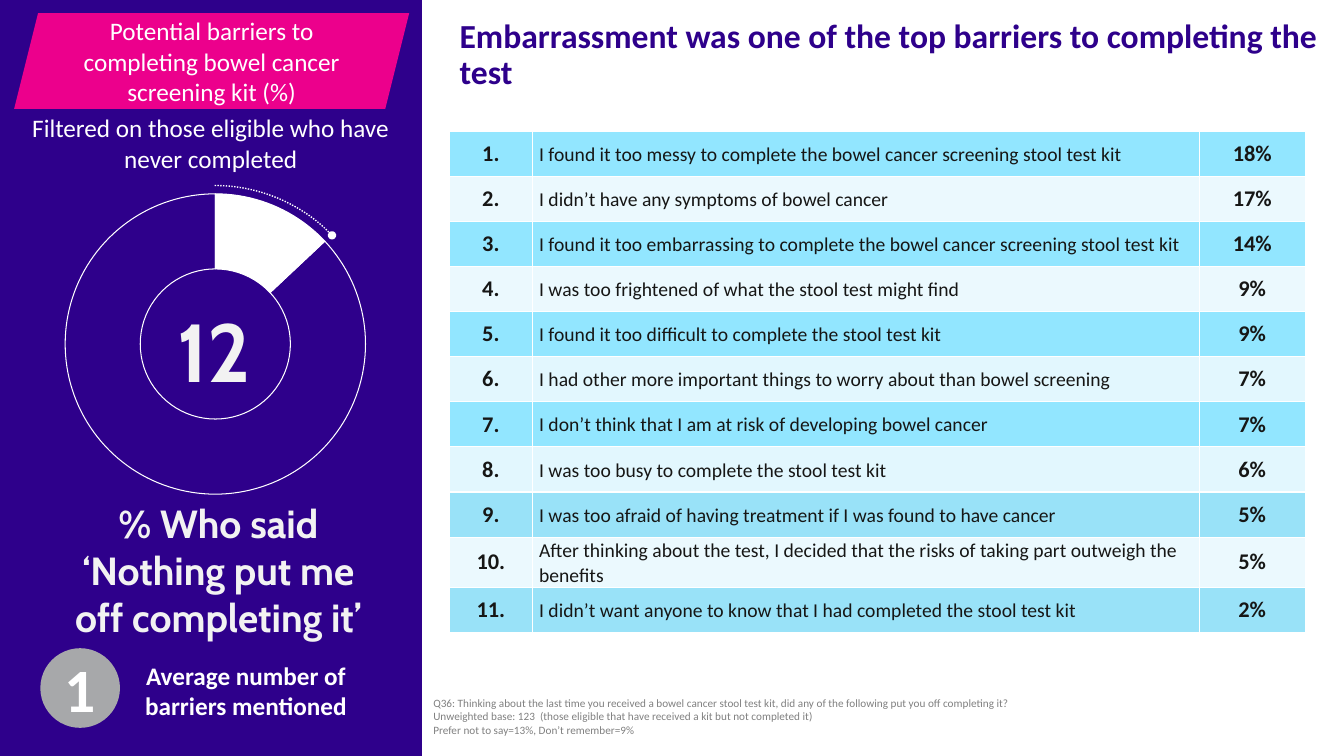
from lxml import etree
from pptx import Presentation
from pptx.chart.data import CategoryChartData
from pptx.dml.color import RGBColor
from pptx.enum.chart import XL_CHART_TYPE
from pptx.enum.dml import MSO_LINE
from pptx.enum.shapes import MSO_SHAPE
from pptx.enum.text import MSO_ANCHOR, MSO_AUTO_SIZE, PP_ALIGN
from pptx.oxml import parse_xml
from pptx.oxml.ns import qn
from pptx.util import Pt

LEFT, CENTER = PP_ALIGN.LEFT, PP_ALIGN.CENTER
TOP, MIDDLE = MSO_ANCHOR.TOP, MSO_ANCHOR.MIDDLE
FIXED, GROW = MSO_AUTO_SIZE.NONE, MSO_AUTO_SIZE.SHAPE_TO_FIT_TEXT
TITLE_ONLY = 5
PURPLE, PINK, GREY, WHITE = "2E008B", "EC008C", "A7A8AA", "FFFFFF"
PALE, INK, NOTE_GREY = "F2F2F2", "161615", "808080"
SKY, DULL_SKY, ICE, MIST = "92E6FF", "99E2F8", "EBF9FE", "E2F7FE"

BARRIERS = [
    ("I found it too messy to complete the bowel cancer screening stool test kit", 18, SKY),
    ("I didn’t have any symptoms of bowel cancer", 17, ICE),
    ("I found it too embarrassing to complete the bowel cancer screening stool test kit", 14, SKY),
    ("I was too frightened of what the stool test might find", 9, ICE),
    ("I found it too difficult to complete the stool test kit", 9, SKY),
    ("I had other more important things to worry about than bowel screening", 7, MIST),
    ("I don’t think that I am at risk of developing bowel cancer", 7, SKY),
    ("I was too busy to complete the stool test kit", 6, MIST),
    ("I was too afraid of having treatment if I was found to have cancer", 5, DULL_SKY),
    ("After thinking about the test, I decided that the risks of taking part outweigh the benefits", 5, ICE),
    ("I didn’t want anyone to know that I had completed the stool test kit", 2, DULL_SKY),
]
NOTES = [
    "Q36: Thinking about the last time you received a bowel cancer stool test kit, "
    "did any of the following put you off completing it?",
    "Unweighted base: 123  (those eligible that have received a kit but not completed it)",
    "Prefer not to say=13%, Don’t remember=9%",
]


def color(value):
    return RGBColor.from_string(value)


def set_all(target, values):
    for name, value in values.items():
        setattr(target, name, value)


def write(frame, lines, size, ink, bold=False, font="Calibri", align=CENTER, spacing=None):
    """Fill a text frame with one formatted paragraph per line."""
    for index, line in enumerate(lines):
        paragraph = frame.add_paragraph() if index else frame.paragraphs[0]
        set_all(paragraph, {"alignment": align, "line_spacing": spacing})
        run = paragraph.add_run()
        run.text = line
        set_all(run.font, {"size": Pt(size), "bold": bold, "name": font})
        run.font.color.rgb = color(ink)


def add_label(slide, box, lines, size, ink, **formats):
    label = slide.shapes.add_textbox(*map(Pt, box))
    set_all(label.text_frame, {"word_wrap": True, "auto_size": GROW})
    write(label.text_frame, lines, size, ink, **formats)


def add_block(slide, kind, box, fill):
    block = slide.shapes.add_shape(kind, *map(Pt, box))
    block.shadow.inherit = False
    block.fill.solid()
    block.fill.fore_color.rgb = color(fill)
    block.line.fill.background()
    set_all(block.text_frame, {"word_wrap": True, "vertical_anchor": MIDDLE})
    return block


def add_ring(slide, left, top, width, height):
    """Doughnut with a dotted arc around the filled share and its value inside."""
    data = CategoryChartData()
    data.categories = ["1", "2"]
    data.add_series("Series 1", (13, 87))
    chart = slide.shapes.add_chart(
        XL_CHART_TYPE.DOUGHNUT, Pt(left), Pt(top), Pt(width), Pt(height), data).chart
    set_all(chart, {"has_legend": False, "has_title": False})
    set_all(chart.font, {"size": Pt(10), "name": "Calibri"})
    chart.font.color.rgb = color("58595B")
    plot = chart.plots[0]
    set_all(plot, {"vary_by_categories": False, "has_data_labels": False})
    for index in range(2):
        part = plot.series[0].points[index].format
        if index == 0:
            part.fill.solid()
            part.fill.fore_color.rgb = color(WHITE)
        else:
            part.fill.background()
        part.line.color.rgb = color(WHITE)
        part.line.width = Pt(0.75)

    # Plot area centred in the chart
    diameter = 214.6
    share_x, share_y = diameter / width, diameter / height
    settings = {"layoutTarget": "inner", "xMode": "edge", "yMode": "edge",
                "x": round((1 - share_x) / 2, 3), "y": round((1 - share_y) / 2, 3),
                "w": round(share_x, 3), "h": round(share_y, 3)}
    plot_area = plot._element.getparent()
    for old in plot_area.findall(qn("c:layout")):
        plot_area.remove(old)
    layout = etree.Element(qn("c:layout"))
    manual = etree.SubElement(layout, qn("c:manualLayout"))
    for name, value in settings.items():
        etree.SubElement(manual, qn("c:" + name)).set("val", str(value))
    plot_area.insert(0, layout)

    # Dotted arc ending in a dot
    arc = slide.shapes.add_shape(
        MSO_SHAPE.ARC, Pt(left + 19.5), Pt(top + 3.6), Pt(230.4), Pt(226.8))
    arc.adjustments[0], arc.adjustments[1] = 162, 190.27
    arc.shadow.inherit = False
    arc.fill.background()
    arc.line.color.rgb = color(WHITE)
    set_all(arc.line, {"width": Pt(1), "dash_style": MSO_LINE.ROUND_DOT})
    etree.SubElement(arc.line._get_or_add_ln(), qn("a:tailEnd")).set("type", "oval")

    add_label(slide, (left + 84.2, top + 82.1, 100, 78.5), ["12"], 58.7, PALE,
              bold=True, font="Cabin")


def add_side_panel(slide, left, top, width, height):
    panel = add_block(slide, MSO_SHAPE.RECTANGLE, (left, top, width, height), PURPLE)
    panel.line.color.rgb = color(PURPLE)
    panel.line.width = Pt(1)

    # Banner and filter
    banner = add_block(slide, MSO_SHAPE.PARALLELOGRAM,
                       (left + 10.1, top + 9.4, 282.2, 68.4), PINK)
    set_all(banner.text_frame, {"margin_left": Pt(9.4), "margin_right": Pt(9.4),
                                "margin_top": Pt(5), "margin_bottom": Pt(5)})
    write(banner.text_frame, ["Potential barriers to completing bowel cancer screening kit (%)"],
          18, WHITE)
    add_label(slide, (left + 13.7, top + 77, 273.6, 51.1),
              ["Filtered on those eligible who have never completed"], 18, WHITE)

    # Share not put off
    add_ring(slide, left + 18.7, top + 128.9, 270, 234)
    add_label(slide, (left + 33.1, top + 352.8, 245.5, 108.7),
              ["% Who said ‘Nothing put me off completing it’"], 28, PALE,
              bold=True, font="Cabin")

    # Average
    badge = add_block(slide, MSO_SHAPE.OVAL, (left + 28.8, top + 463, 56.9, 56.9), GREY)
    write(badge.text_frame, ["1"], 44, WHITE, bold=True)
    add_label(slide, (left + 86.4, top + 468, 178.6, 51.1),
              ["Average number of barriers mentioned"], 18, WHITE, bold=True)


def add_title(slide, left, top, width, height):
    title = slide.shapes.title
    set_all(title, {"left": Pt(left), "top": Pt(top), "width": Pt(width), "height": Pt(height)})
    set_all(title.text_frame, {"word_wrap": True, "auto_size": FIXED, "vertical_anchor": TOP})
    write(title.text_frame, ["Embarrassment was one of the top barriers to completing the test"],
          24, PURPLE, bold=True, align=LEFT, spacing=0.9)


def format_cell(cell, fill):
    properties = cell._tc.get_or_add_tcPr()
    for side in ("lnL", "lnR", "lnT", "lnB"):
        properties.append(parse_xml(
            f'<a:{side} xmlns:a="http://schemas.openxmlformats.org/drawingml/2006/main" '
            f'w="12700"><a:solidFill><a:srgbClr val="{WHITE}"/></a:solidFill></a:{side}>'))
    cell.fill.solid()
    cell.fill.fore_color.rgb = color(fill)
    cell.vertical_anchor = MIDDLE


def add_barrier_table(slide, left, top, row_height):
    widths = (59, 476.6, 75.6)
    table = slide.shapes.add_table(
        len(BARRIERS), len(widths), Pt(left), Pt(top), Pt(sum(widths)),
        Pt(row_height * len(BARRIERS))).table
    set_all(table, {"first_row": False, "horz_banding": False})
    for column, width in zip(table.columns, widths):
        column.width = Pt(width)
    for rank, (barrier, percent, fill) in enumerate(BARRIERS, 1):
        row = table.rows[rank - 1]
        row.height = Pt(row_height)
        for cell, text in zip(row.cells, (f"{rank}.", barrier, f"{percent}%")):
            format_cell(cell, fill)
            if text == barrier:
                set_all(cell, {"margin_left": Pt(5), "margin_right": Pt(5),
                               "margin_top": 0, "margin_bottom": 0})
                write(cell.text_frame, [text], 14, INK, align=LEFT, spacing=1.07)
            else:
                write(cell.text_frame, [text], 16, INK, bold=True)


def main():
    presentation = Presentation()
    set_all(presentation, {"slide_width": Pt(960), "slide_height": Pt(540)})
    slide = presentation.slides.add_slide(presentation.slide_layouts[TITLE_ONLY])
    add_side_panel(slide, 0, 0, 301, 540)
    add_title(slide, 321.1, 10.1, 628.6, 59)
    add_barrier_table(slide, 321.1, 93.6, 32.25)
    add_label(slide, (302.4, 493.9, 658, 36), NOTES, 8, NOTE_GREY, align=LEFT)
    presentation.save("out.pptx")


if __name__ == "__main__":
    main()
